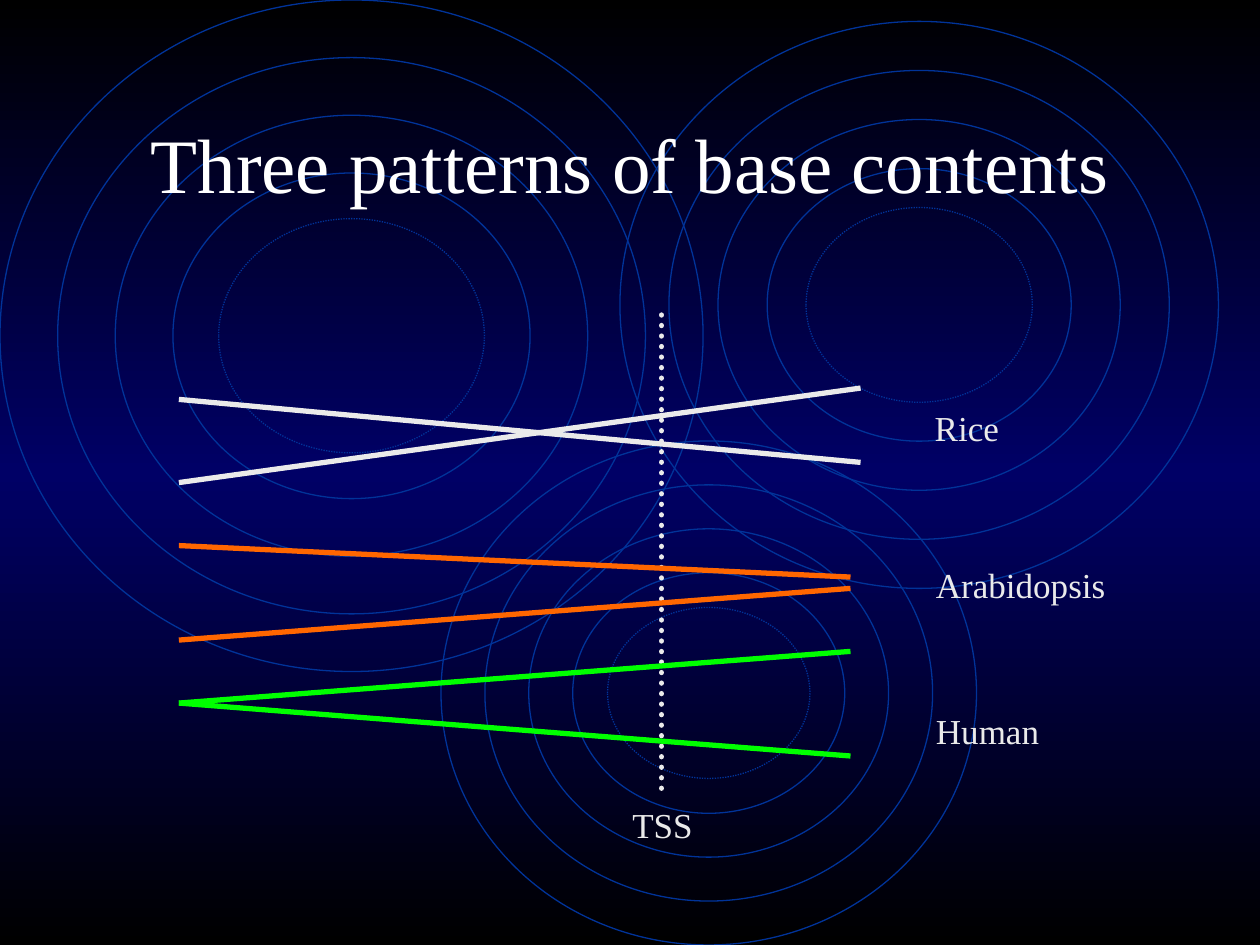
"""Build a slide comparing base content patterns around the TSS in three species."""
from copy import deepcopy
from dataclasses import dataclass

from lxml.etree import SubElement
from pptx import Presentation
from pptx.dml.color import RGBColor
from pptx.enum.dml import MSO_LINE
from pptx.enum.shapes import MSO_CONNECTOR, MSO_SHAPE
from pptx.enum.text import MSO_ANCHOR, MSO_AUTO_SIZE, PP_ALIGN
from pptx.oxml.ns import qn
from pptx.slide import Slide
from pptx.text.text import TextFrame
from pptx.util import Inches, Pt

BLACK = RGBColor(0x00, 0x00, 0x00)
NAVY = RGBColor(0x00, 0x00, 0x66)
RING_BLUE = RGBColor(0x00, 0x33, 0x99)
WHITE = RGBColor(0xFF, 0xFF, 0xFF)
PALE = RGBColor(0xEA, 0xEA, 0xEA)
ORANGE = RGBColor(0xFF, 0x66, 0x00)
GREEN = RGBColor(0x00, 0xFF, 0x00)
FONT = "Times New Roman"
RING_INSETS = (0, 0.082, 0.164, 0.246, 0.311)
TREND_LEFT = 1.42


@dataclass(frozen=True)
class Ripple:
    left: float
    top: float
    width: float
    height: float


@dataclass(frozen=True)
class Trend:
    start: float
    right: float
    end: float
    color: RGBColor


@dataclass(frozen=True)
class Label:
    text: str
    left: float
    top: float
    width: float
    wrap: bool = False


RIPPLES = (
    Ripple(0, 0, 5.58, 5.33),
    Ripple(3.5, 3.5, 4.25, 4),
    Ripple(4.92, 0.17, 4.75, 4.5),
)
TRENDS = (
    Trend(3.17, 6.83, 3.67, PALE),
    Trend(3.83, 6.83, 3.08, PALE),
    Trend(4.33, 6.75, 4.58, ORANGE),
    Trend(5.08, 6.75, 4.67, ORANGE),
    Trend(5.58, 6.75, 6, GREEN),
    Trend(5.58, 6.75, 5.17, GREEN),
)
LABELS = (
    Label("Rice", 7.32, 3.18, 0.71),
    Label("Arabidopsis", 7.33, 4.42, 1.6),
    Label("Human", 7.33, 5.58, 1.17, wrap=True),
    Label("TSS", 4.92, 6.33, 0.68),
)


def paint_background(page: Slide) -> None:
    fill = page.background.fill
    fill.gradient()
    fill.gradient_angle = 90
    stop_list = page.element.find(".//" + qn("a:gsLst"))
    stop_list.append(deepcopy(stop_list[0]))
    for stop, position, color in zip(fill.gradient_stops, (0, 0.5, 1), (BLACK, NAVY, BLACK)):
        stop.position = position
        stop.color.rgb = color


def draw_ripple(page: Slide, ripple: Ripple) -> None:
    for fraction in RING_INSETS:
        inset = fraction * ripple.width
        ring = page.shapes.add_shape(
            MSO_SHAPE.OVAL,
            Inches(ripple.left + inset), Inches(ripple.top + inset),
            Inches(ripple.width - 2 * inset), Inches(ripple.height - 2 * inset),
        )
        ring.shadow.inherit = False
        ring.fill.background()
        ring.line.color.rgb = RING_BLUE
        ring.line.width = Pt(0.75)
        if fraction == RING_INSETS[-1]:
            ring.line.dash_style = MSO_LINE.ROUND_DOT


def draw_line(page: Slide, x1: float, y1: float, x2: float, y2: float,
              color: RGBColor, dotted: bool = False) -> None:
    line = page.shapes.add_connector(
        MSO_CONNECTOR.STRAIGHT, Inches(x1), Inches(y1), Inches(x2), Inches(y2))
    line.line.color.rgb = color
    line.line.width = Pt(3)
    if dotted:
        line.line.dash_style = MSO_LINE.ROUND_DOT
        line.element.spPr.find(qn("a:ln")).set("cap", "rnd")
    SubElement(line.element.spPr, qn("a:effectLst"))


def write_text(frame: TextFrame, text: str, size: int, color: RGBColor) -> None:
    frame.text = text
    font = frame.paragraphs[0].runs[0].font
    font.name = FONT
    font.size = Pt(size)
    font.color.rgb = color


def place_title(page: Slide, text: str) -> None:
    title = page.shapes.title
    title.left, title.top = Inches(0.75), Inches(0.67)
    title.width, title.height = Inches(8.5), Inches(1.25)
    write_text(title.text_frame, text, 44, WHITE)
    title.text_frame.vertical_anchor = MSO_ANCHOR.MIDDLE
    title.text_frame.paragraphs[0].alignment = PP_ALIGN.CENTER
    title.element.getparent().append(title.element)


def add_label(page: Slide, label: Label) -> None:
    box = page.shapes.add_textbox(
        Inches(label.left), Inches(label.top), Inches(label.width), Inches(0.43))
    box.text_frame.word_wrap = label.wrap
    box.text_frame.auto_size = MSO_AUTO_SIZE.SHAPE_TO_FIT_TEXT
    write_text(box.text_frame, label.text, 20, PALE)


def main() -> None:
    deck = Presentation()
    deck.slide_width, deck.slide_height = Inches(10), Inches(7.5)
    page = deck.slides.add_slide(deck.slide_layouts.get_by_name("Title Only"))
    paint_background(page)
    for ripple in RIPPLES:
        draw_ripple(page, ripple)
    place_title(page, "Three patterns of base contents")
    draw_line(page, 5.25, 2.5, 5.25, 6.33, PALE, dotted=True)
    for trend in TRENDS:
        draw_line(page, TREND_LEFT, trend.start, trend.right, trend.end, trend.color)
    for label in LABELS:
        add_label(page, label)
    deck.save("out.pptx")


if __name__ == "__main__":
    main()
